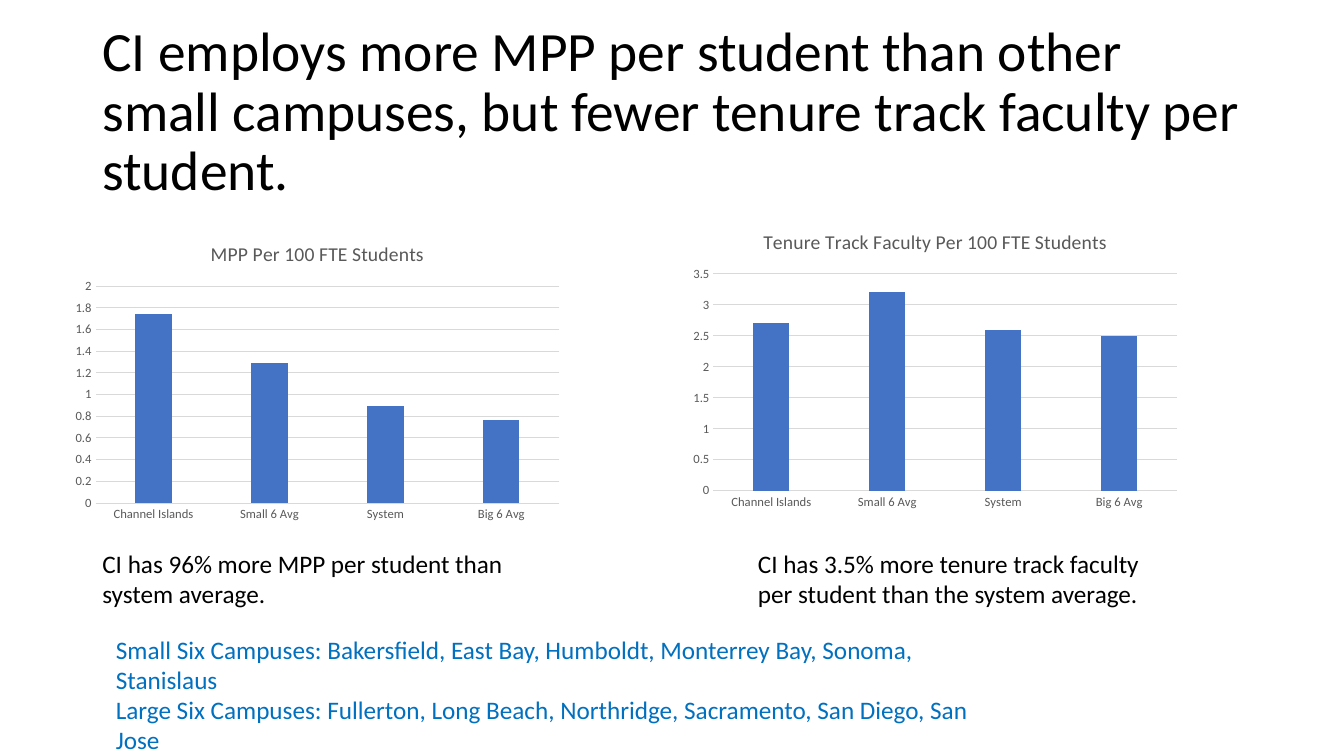
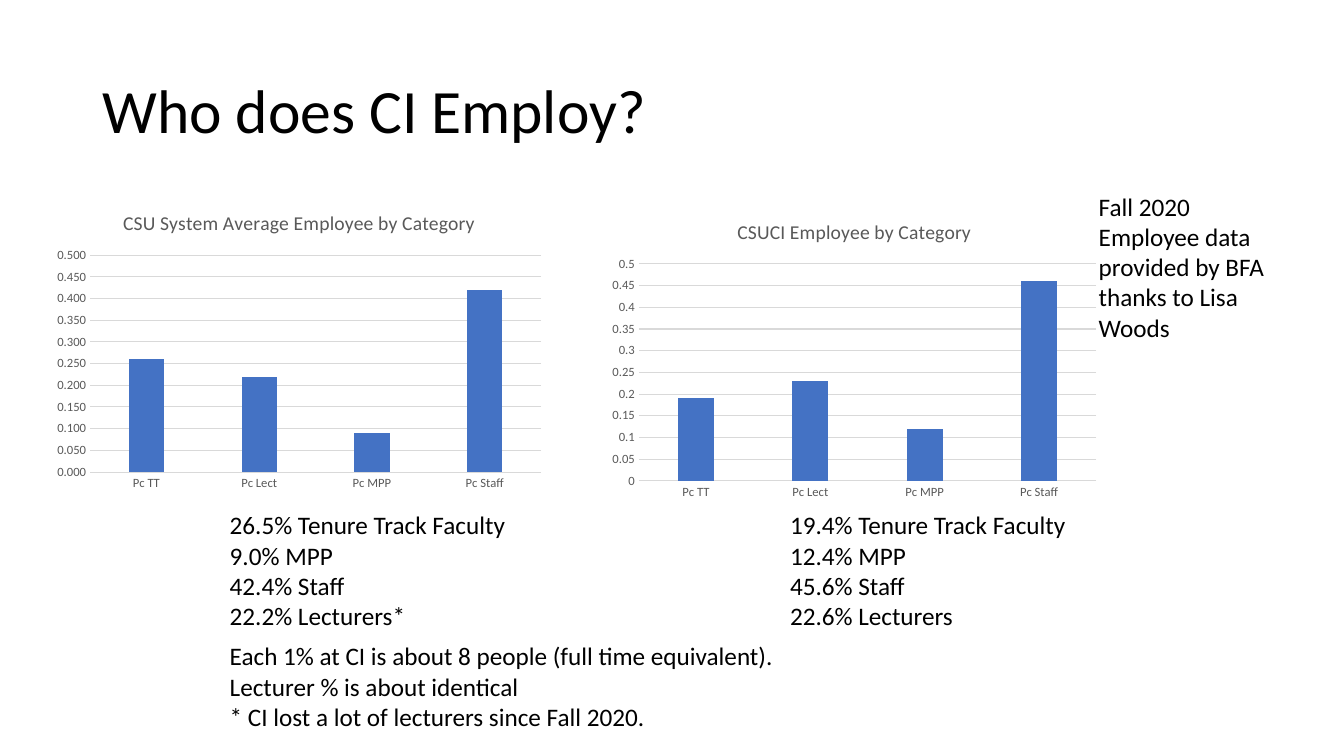
from collections import namedtuple

from pptx import Presentation
from pptx import util as u
from pptx.chart import data as chart_data
from pptx.dml.color import RGBColor
from pptx.enum import chart as ch
from pptx.enum import text as tx

FONT = "Calibri"
BLACK = RGBColor(0x00, 0x00, 0x00)
LINK_BLUE = RGBColor(0x00, 0x70, 0xC0)
BAR_BLUE = RGBColor(0x44, 0x72, 0xC4)
LABEL_GRAY = RGBColor(0x59, 0x59, 0x59)
GRID_GRAY = RGBColor(0xD9, 0xD9, 0xD9)

Box = namedtuple("Box", "left top width height")
Graph = namedtuple("Graph", "left top title categories values number_format maximum",
                   defaults=("General", None))
Note = namedtuple("Note", "box lines color", defaults=(BLACK,))

TITLE_BOX = Box(2.33, 1.01, 29.21, 3.68)
GRAPH_WIDTH, GRAPH_HEIGHT = 12.7, 7.62
CAMPUSES = ("Channel Islands", "Small 6 Avg", "System", "Big 6 Avg")
JOBS = ("Pc TT", "Pc Lect", "Pc MPP", "Pc Staff")


def style_font(font, size, color):
    font.name = FONT
    font.size = u.Pt(size)
    font.bold = False
    font.color.rgb = color


def add_text(slide, box, lines, size=18, color=BLACK):
    frame = slide.shapes.add_textbox(*map(u.Cm, box)).text_frame
    frame.word_wrap = True
    frame.text = "\n".join(lines)
    for paragraph in frame.paragraphs:
        style_font(paragraph.font, size, color)
    return frame


def add_title(slide, title, size):
    frame = add_text(slide, TITLE_BOX, [title], size)
    frame.vertical_anchor = tx.MSO_ANCHOR.MIDDLE
    frame.paragraphs[0].line_spacing = 0.9


def add_note(slide, note):
    frame = add_text(slide, note.box, note.lines, color=note.color)
    frame.auto_size = tx.MSO_AUTO_SIZE.SHAPE_TO_FIT_TEXT


def style_line(line):
    line.color.rgb = GRID_GRAY
    line.width = u.Pt(0.75)


def add_graph(slide, graph):
    figures = chart_data.CategoryChartData()
    figures.categories = graph.categories
    figures.add_series("Series 1", graph.values)
    box = Box(graph.left, graph.top, GRAPH_WIDTH, GRAPH_HEIGHT)
    chart = slide.shapes.add_chart(
        ch.XL_CHART_TYPE.COLUMN_CLUSTERED, *map(u.Cm, box), figures).chart
    style_font(chart.font, 10, BLACK)
    chart.has_legend = False
    chart.has_title = True
    heading = chart.chart_title.text_frame
    heading.text = graph.title
    style_font(heading.paragraphs[0].font, 14, LABEL_GRAY)
    chart.chart_title.include_in_layout = False

    plot = chart.plots[0]
    plot.gap_width = 219
    plot.overlap = -27
    plot.vary_by_categories = False
    bars = plot.series[0].format.fill
    bars.solid()
    bars.fore_color.rgb = BAR_BLUE

    for axis in (chart.category_axis, chart.value_axis):
        axis.major_tick_mark = axis.minor_tick_mark = ch.XL_TICK_MARK.NONE
        style_font(axis.tick_labels.font, 9, LABEL_GRAY)
    style_line(chart.category_axis.format.line)
    scale = chart.value_axis
    scale.format.line.fill.background()
    style_line(scale.major_gridlines.format.line)
    scale.tick_labels.number_format = graph.number_format
    scale.tick_labels.number_format_is_linked = False
    if graph.maximum:
        scale.maximum_scale = graph.maximum


def add_comparison_slide(deck, title, title_size, graphs, notes):
    slide = deck.slides.add_slide(deck.slide_layouts[6])
    add_title(slide, title, title_size)
    for note in notes:
        add_note(slide, note)
    for graph in graphs:
        add_graph(slide, graph)


def main():
    deck = Presentation()
    deck.slide_width = u.Cm(33.87)
    deck.slide_height = u.Cm(19.05)

    add_comparison_slide(
        deck,
        "CI employs more MPP per student than other small campuses, "
        "but fewer tenure track faculty per student.",
        39.6,
        [Graph(17.22, 5.37, "Tenure Track Faculty Per 100 FTE Students",
               CAMPUSES, (2.7, 3.2, 2.6, 2.5)),
         Graph(1.65, 5.68, "MPP Per 100 FTE Students",
               CAMPUSES, (1.74, 1.29, 0.89, 0.77))],
        [Note(Box(2.33, 13.69, 11.33, 1.8),
              ["CI has 96% more MPP per student than", "system average."]),
         Note(Box(18.85, 13.69, 10.44, 1.8),
              ["CI has 3.5% more tenure track faculty",
               "per student than the system average."]),
         Note(Box(2.67, 15.85, 22.22, 4.11),
              ["Small Six Campuses: Bakersfield, East Bay, Humboldt, "
               "Monterrey Bay, Sonoma, Stanislaus",
               "Large Six Campuses: Fullerton, Long Beach, Northridge, "
               "Sacramento, San Diego, San Jose"], LINK_BLUE)])

    add_comparison_slide(
        deck, "Who does CI Employ?", 44,
        [Graph(1.19, 4.9, "CSU System Average Employee by Category",
               JOBS, (0.26, 0.22, 0.09, 0.42), "0.000", 0.5),
         Graph(15.18, 5.12, "CSUCI Employee by Category",
               JOBS, (0.19, 0.23, 0.12, 0.46))],
        [Note(Box(5.54, 16.02, 21.13, 2.57),
              ["Each 1% at CI is about 8 people (full time equivalent).",
               "Lecturer % is about identical",
               "* CI lost a lot of lecturers since Fall 2020."]),
         Note(Box(5.54, 12.72, 7.9, 3.33),
              ["26.5% Tenure Track Faculty", "9.0% MPP",
               "42.4% Staff", "22.2% Lecturers*"]),
         Note(Box(19.66, 12.72, 9.88, 3.33),
              ["19.4% Tenure Track Faculty", "12.4% MPP",
               "45.6% Staff", "22.6% Lecturers"]),
         Note(Box(27.44, 4.69, 5.44, 4.11),
              ["Fall 2020 Employee data provided by BFA thanks to Lisa Woods"])])

    deck.save("out.pptx")


if __name__ == "__main__":
    main()
